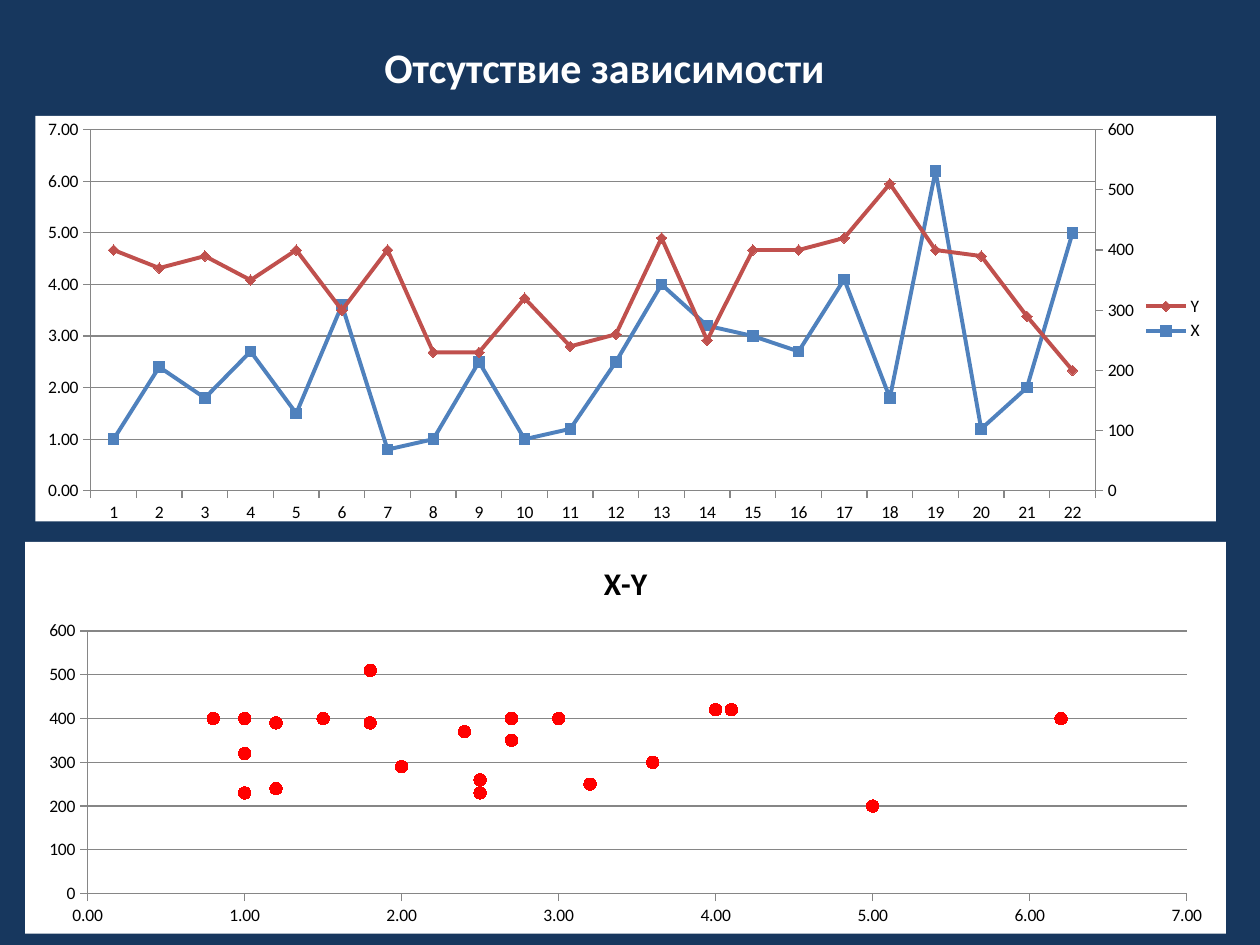
from copy import deepcopy

from lxml import etree
from pptx import Presentation
from pptx.chart.axis import ValueAxis
from pptx.chart.data import CategoryChartData, XyChartData
from pptx.dml.color import RGBColor
from pptx.enum.chart import (XL_CHART_TYPE, XL_LEGEND_POSITION,
                             XL_MARKER_STYLE, XL_TICK_MARK)
from pptx.enum.text import MSO_ANCHOR, MSO_AUTO_SIZE, PP_ALIGN
from pptx.oxml import parse_xml
from pptx.oxml.ns import nsdecls, qn
from pptx.util import Inches, Pt

LINE, XY = XL_CHART_TYPE.LINE_MARKERS_STACKED, XL_CHART_TYPE.XY_SCATTER
RIGHT = XL_LEGEND_POSITION.RIGHT
SQUARE, DIAMOND, CIRCLE = (XL_MARKER_STYLE.SQUARE, XL_MARKER_STYLE.DIAMOND,
                           XL_MARKER_STYLE.CIRCLE)
OUT, NONE = XL_TICK_MARK.OUTSIDE, XL_TICK_MARK.NONE
TOP, LEFT, FIT = MSO_ANCHOR.TOP, PP_ALIGN.LEFT, MSO_AUTO_SIZE.SHAPE_TO_FIT_TEXT

FONT = "Calibri"
NAVY, WHITE, BLACK, GRAY = "17375E", "FFFFFF", "000000", "868686"
BLUE, BRICK, RED = "4F81BD", "C0504D", "FF0000"

XS = [1, 2.4, 1.8, 2.7, 1.5, 3.6, 0.8, 1, 2.5, 1, 1.2,
      2.5, 4, 3.2, 3, 2.7, 4.1, 1.8, 6.2, 1.2, 2, 5]
YS = [400, 370, 390, 350, 400, 300, 400, 230, 230, 320, 240,
      260, 420, 250, 400, 400, 420, 510, 400, 390, 290, 200]
X_SCALE = dict(minimum_scale=0, maximum_scale=7, major_unit=1)
Y_SCALE = dict(minimum_scale=0, maximum_scale=600, major_unit=100)


def put(item, **values):
    for name, value in values.items():
        setattr(item, name, value)


def paint(fill, color):
    fill.solid()
    fill.fore_color.rgb = RGBColor.from_string(color)


def style(font, size, color, bold=False):
    put(font, name=FONT, size=Pt(size), bold=bold)
    font.color.rgb = RGBColor.from_string(color)


def mark(series, shape, size, color):
    put(series.marker, style=shape, size=size)
    paint(series.marker.format.fill, color)
    paint(series.marker.format.line.fill, color)
    series.smooth = False


def set_axis(axis, grid, fmt="General", **scale):
    put(axis, has_major_gridlines=grid, major_tick_mark=OUT,
        minor_tick_mark=NONE, **scale)
    put(axis.tick_labels, number_format=fmt, number_format_is_linked=False)
    paint(axis.format.line.fill, GRAY)
    if grid:
        paint(axis.major_gridlines.format.line.fill, GRAY)


def add_chart(slide, kind, data, box):
    chart = slide.shapes.add_chart(kind, *map(Inches, box), data).chart
    style(chart.font, 10, BLACK)
    # White chart area without a border
    area = parse_xml(
        f'<c:spPr {nsdecls("c", "a")}><a:solidFill><a:srgbClr val="{WHITE}"/>'
        '</a:solidFill><a:ln><a:noFill/></a:ln></c:spPr>')
    chart.element.find(qn("c:chart")).addnext(area)
    chart.plots[0].vary_by_categories = False
    return chart


def fix_plot(chart, **frame):
    plot = chart.element.find(".//" + qn("c:plotArea"))
    for old in plot.findall(qn("c:layout")):
        plot.remove(old)
    layout = etree.Element(qn("c:layout"))
    manual = etree.SubElement(layout, qn("c:manualLayout"))
    parts = dict(layoutTarget="inner", xMode="edge", yMode="edge", **frame)
    for tag, value in parts.items():
        etree.SubElement(manual, qn("c:" + tag), val=str(value))
    plot.insert(0, layout)


def add_right(chart):
    """Move the last series to a group of its own with a right axis."""
    plot = chart.element.find(".//" + qn("c:plotArea"))
    first = plot.find(qn("c:lineChart"))
    second = deepcopy(first)
    first.remove(first.findall(qn("c:ser"))[-1])
    second.remove(second.find(qn("c:ser")))
    first.addnext(second)
    cat, val = (deepcopy(plot.find(qn(tag))) for tag in ("c:catAx", "c:valAx"))
    ids = {cat.find(qn("c:axId")).get("val"): "5001",
           val.find(qn("c:axId")).get("val"): "5002"}
    for part in (second, cat, val):
        for tag in ("c:axId", "c:crossAx"):
            for ref in part.findall(qn(tag)):
                ref.set("val", ids[ref.get("val")])
    plot.findall(qn("c:valAx"))[-1].addnext(val)
    val.addnext(cat)
    cat.find(qn("c:delete")).set("val", "1")
    val.find(qn("c:axPos")).set("val", "r")
    val.find(qn("c:crosses")).set("val", "max")
    set_axis(ValueAxis(val), False, **Y_SCALE)


def add_lines(slide, box):
    data = CategoryChartData()
    data.categories = [str(n + 1) for n in range(len(XS))]
    data.add_series("X", XS)
    data.add_series("Y", YS)
    chart = add_chart(slide, LINE, data, box)
    looks = ((SQUARE, BLUE), (DIAMOND, BRICK))
    for series, (shape, color) in zip(chart.plots[0].series, looks):
        mark(series, shape, 6, color)
        series.format.line.width = Pt(2.25)
        paint(series.format.line.fill, color)
    set_axis(chart.category_axis, False)
    set_axis(chart.value_axis, True, "0.00", **X_SCALE)
    put(chart, has_title=False, has_legend=True)
    put(chart.legend, position=RIGHT, include_in_layout=False)
    add_right(chart)
    fix_plot(chart, x=0.047, y=0.034, w=0.851, h=0.891)


def add_dots(slide, box):
    data = XyChartData()
    dots = data.add_series("X-Y")
    for x, y in zip(XS, YS):
        dots.add_data_point(x, y)
    chart = add_chart(slide, XY, data, box)
    series = chart.plots[0].series[0]
    mark(series, CIRCLE, 7, RED)
    series.format.line.fill.background()
    set_axis(chart.category_axis, False, "0.00", **X_SCALE)
    set_axis(chart.value_axis, True, **Y_SCALE)
    put(chart, has_legend=False, has_title=True)
    frame = chart.chart_title.text_frame
    frame.text = "X-Y"
    style(frame.paragraphs[0].runs[0].font, 18, BLACK, True)


def add_title(slide, text, box):
    title = slide.shapes.title
    left, top, width, height = map(Inches, box)
    put(title, left=left, top=top, width=width, height=height)
    frame = title.text_frame
    frame.text = text
    put(frame, word_wrap=False, auto_size=FIT, vertical_anchor=TOP)
    frame.paragraphs[0].alignment = LEFT
    style(frame.paragraphs[0].runs[0].font, 24, WHITE, True)


def main():
    deck = Presentation()
    put(deck, slide_width=Inches(10), slide_height=Inches(7.5))
    slide = deck.slides.add_slide(deck.slide_layouts[5])
    paint(slide.background.fill, NAVY)
    add_title(slide, "Отсутствие зависимости", (2.95, 0.28, 3.73, 0.5))
    add_lines(slide, (0.28, 0.92, 9.37, 3.23))
    add_dots(slide, (0.2, 4.3, 9.53, 3.11))
    deck.save("out.pptx")


if __name__ == "__main__":
    main()
